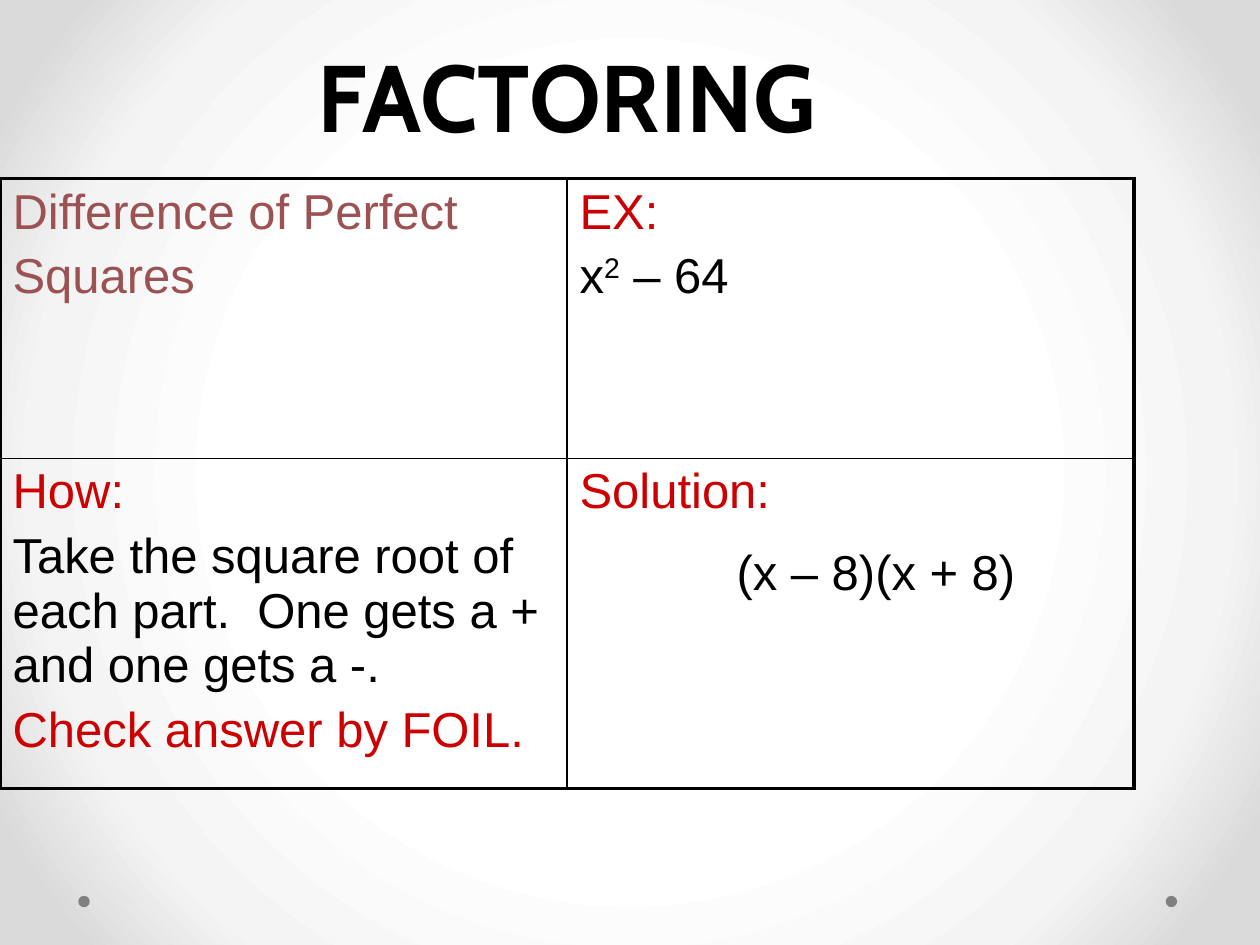
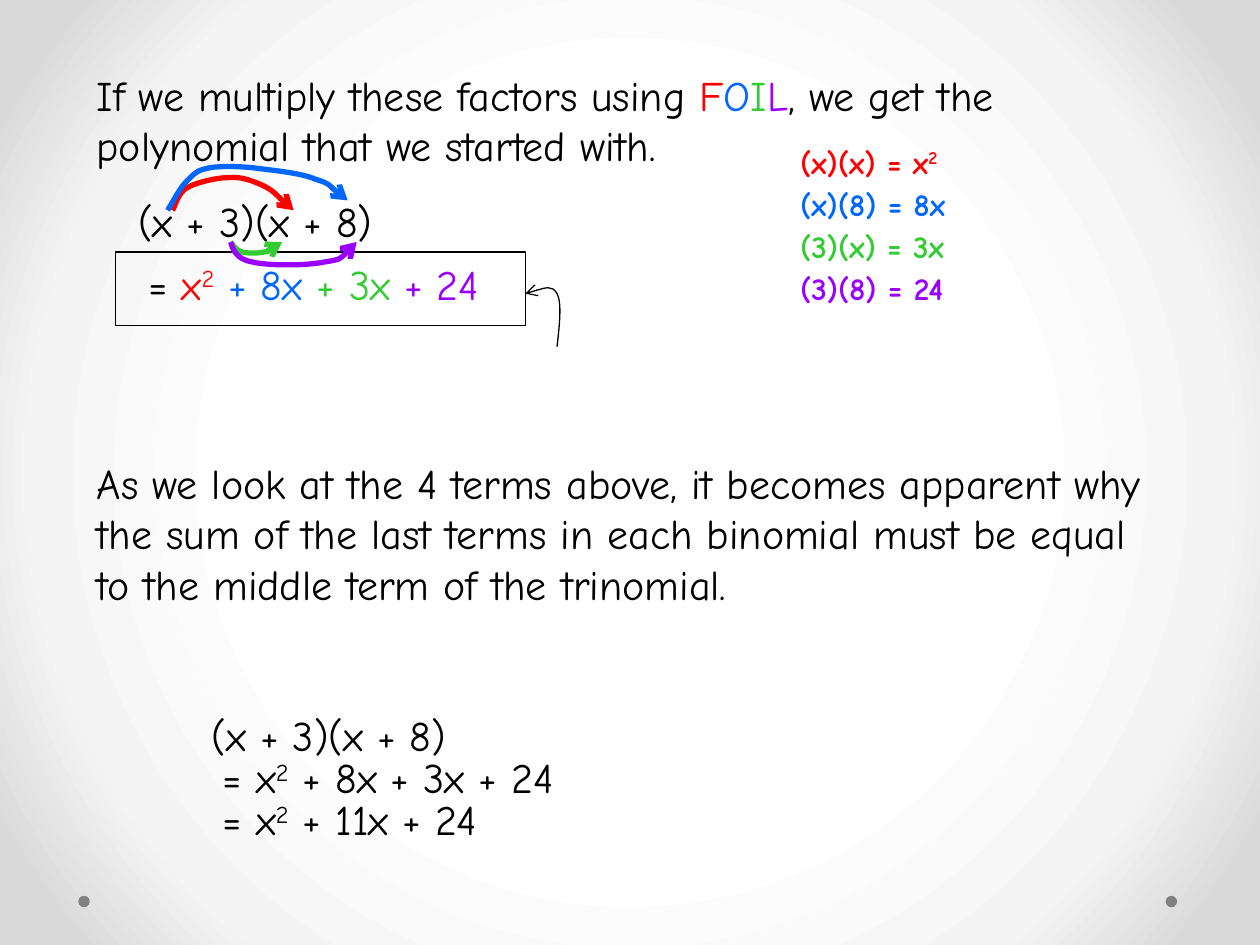
from lxml.etree import SubElement
from pptx import Presentation
from pptx.dml.color import RGBColor
from pptx.enum.shapes import MSO_SHAPE
from pptx.enum.text import MSO_ANCHOR, PP_ALIGN
from pptx.oxml import parse_xml
from pptx.oxml.ns import nsdecls, qn
from pptx.util import Cm, Pt

COLORS = {
    "ink": "000000", "dot": "808080", "topic": "9C5252", "heading": "CC0000",
    "first": "FF0000", "outer": "0066FF", "inner": "33CC33", "last": "9900FF",
}
BACKDROP = [(50, "FFFFFF"), (76, "F4F4F4"), (92, "DADADA")]
TITLE_FONT, TABLE_FONT, BODY_FONT = "Cabin", "Arial", "Comic Neue"
LINE_STEP = 0.85  # cm between stacked lines of algebra


def rgb(name):
    return RGBColor.from_string(COLORS[name])


# Shared slide ground
def add_slide(deck):
    slide = deck.slides.add_slide(deck.slide_layouts[6])
    stops = "".join(
        f'<a:gs pos="{pos * 1000}"><a:srgbClr val="{color}"/></a:gs>'
        for pos, color in BACKDROP)
    slide.element.cSld.insert(0, parse_xml(
        f'<p:bg {nsdecls("p", "a")}><p:bgPr><a:gradFill rotWithShape="1">'
        f'<a:gsLst>{stops}</a:gsLst><a:path path="circle">'
        '<a:fillToRect l="50000" t="50000" r="50000" b="50000"/></a:path>'
        '</a:gradFill><a:effectLst/></p:bgPr></p:bg>'))
    for left in (23.5, 1.58):
        dot = slide.shapes.add_shape(
            MSO_SHAPE.OVAL, Cm(left), Cm(18.06), Cm(0.23), Cm(0.23))
        dot.shadow.inherit = False
        dot.fill.solid()
        dot.fill.fore_color.rgb = rgb("dot")
        dot.line.fill.background()
    return slide


# Text: a paragraph is a list of (text, colour[, "sup"]) runs
def write_runs(paragraph, runs, font, size, bold=False):
    for text, color, *raised in runs:
        run = paragraph.add_run()
        run.text = text
        run.font.name = font
        run.font.size = Pt(size)
        run.font.bold = bold
        run.font.color.rgb = rgb(color)
        if raised:
            run._r.get_or_add_rPr().set("baseline", "30000")


def add_text(slide, left, top, width, height, runs,
             font=BODY_FONT, size=24, bold=False):
    frame = slide.shapes.add_textbox(
        Cm(left), Cm(top), Cm(width), Cm(height)).text_frame
    frame.word_wrap = True
    write_runs(frame.paragraphs[0], runs, font, size, bold)
    return frame


def add_title(slide, text):
    frame = add_text(slide, 0, 0, 22.86, 3.18, [(text, "ink")],
                     TITLE_FONT, 54, True)
    frame.vertical_anchor = MSO_ANCHOR.BOTTOM
    frame.paragraphs[0].alignment = PP_ALIGN.CENTER
    frame.paragraphs[0].line_spacing = Pt(58)


# Table with a thick frame and thin inner rules
def set_borders(cell, widths):
    properties = cell._tc.get_or_add_tcPr()
    for index, (side, width) in enumerate(zip("LRTB", widths)):
        properties.insert(index, parse_xml(
            f'<a:ln{side} {nsdecls("a")} w="{Pt(width)}"><a:solidFill>'
            f'<a:srgbClr val="{COLORS["ink"]}"/></a:solidFill></a:ln{side}>'))


def add_method_table(slide, rows, row_heights, thick=2.25, thin=1):
    table = slide.shapes.add_table(
        2, 2, Cm(0), Cm(3.6), Cm(22.86), Cm(sum(row_heights))).table
    table.first_row = table.horz_banding = False
    for r, height in enumerate(row_heights):
        table.rows[r].height = Cm(height)
        for c, paragraphs in enumerate(rows[r]):
            cell = table.cell(r, c)
            cell.fill.background()
            set_borders(cell, [thick if outer else thin for outer in
                               (c == 0, c == 1, r == 0, r == 1)])
            for index, runs in enumerate(paragraphs):
                frame = cell.text_frame
                paragraph = frame.add_paragraph() if index else frame.paragraphs[0]
                if index:
                    paragraph.space_before = Pt(5.6)
                write_runs(paragraph, runs, TABLE_FONT, 28)


# Curved arrow through Bezier segments: start, then two controls and an end each
def add_curved_arrow(slide, color, width, nodes):
    start, *rest = [(Cm(x), Cm(y)) for x, y in nodes]
    builder = slide.shapes.build_freeform(*start)
    builder.add_line_segments(rest, close=False)
    arrow = builder.convert_to_shape()
    segments = list(arrow._element.iter(qn("a:lnTo")))
    for i in range(0, len(segments), 3):
        outline = segments[i].getparent()
        curve = SubElement(outline, qn("a:cubicBezTo"))
        for segment in segments[i:i + 3]:
            curve.append(segment[0])
            outline.remove(segment)
    arrow.shadow.inherit = False
    arrow.fill.background()
    arrow.line.color.rgb = rgb(color)
    arrow.line.width = Pt(width)
    SubElement(arrow.line._get_or_add_ln(), qn("a:tailEnd"), type="arrow")


def add_frame(slide, left, top, width, height):
    frame = slide.shapes.add_shape(
        MSO_SHAPE.RECTANGLE, Cm(left), Cm(top), Cm(width), Cm(height))
    frame.shadow.inherit = False
    frame.fill.background()
    frame.line.color.rgb = rgb("ink")
    frame.line.width = Pt(0.75)


def build_factoring(deck):
    slide = add_slide(deck)
    add_title(slide, "FACTORING")
    topic = [[("Difference of Perfect", "topic")], [("Squares", "topic")]]
    example = [[("EX:", "heading")],
               [("x", "ink"), ("2", "ink", "sup"), (" – 64", "ink")]]
    how = [[("How:", "heading")],
           [("Take the square root of each part.  One gets a + "
             "and one gets a -.", "ink")],
           [("Check answer by FOIL.", "heading")]]
    solution = [[("Solution:", "heading")]]
    add_method_table(slide, [[topic, example], [how, solution]], [5.64, 6.65])
    add_text(slide, 14.6, 10.8, 7.42, 3.23, [("(x – 8)(x + 8)", "ink")],
             TABLE_FONT, 28)


def build_foil_check(deck):
    slide = add_slide(deck)
    factors = [("(x + 3)(x + 8)", "ink")]

    # Multiplying the factors
    add_text(slide, 1.7, 1.27, 21.79, 2.29, [
        ("If we multiply these factors using ", "ink"),
        ("F", "first"), ("O", "outer"), ("I", "inner"), ("L", "last"),
        (", we get the polynomial that we started with.", "ink")])
    add_text(slide, 2.54, 3.81, 5.92, 1.27, factors)
    add_text(slide, 2.74, 5.08, 8.89, 1.27, [
        ("=", "ink"), (" x", "first"), ("2", "first", "sup"),
        (" + 8x ", "outer"), ("+ 3x ", "inner"), ("+ 24", "last")])

    # The four products
    products = [
        [("(x)(x) = x", "first"), ("2", "first", "sup")],
        [("(x)(8) = 8x", "outer")],
        [("(3)(x) = 3x", "inner")],
        [("(3)(8) = 24", "last")],
    ]
    for i, product in enumerate(products):
        add_text(slide, 15.88, 2.75 + i * LINE_STEP, 5.92, 1.02, product,
                 size=18, bold=True)

    # Why the middle term is a sum
    add_text(slide, 1.7, 9.1, 21.79, 3.3, [
        ("As we look at the 4 terms above, it becomes apparent why the sum of "
         "the last terms in each binomial must be equal to the middle term of "
         "the trinomial.", "ink")])
    add_frame(slide, 2.33, 5.08, 8.26, 1.48)
    add_curved_arrow(slide, "ink", 0.75, [
        (11.23, 6.99), (11.28, 6.55), (11.33, 6.1), (11.23, 5.92),
        (11.13, 5.74), (10.85, 5.84), (10.59, 5.92)])

    # Worked expansion
    add_text(slide, 4.02, 14.18, 5.92, 1.27, factors)
    for i, terms in enumerate((" + 8x + 3x + 24", " + 11x + 24"), start=1):
        add_text(slide, 4.24, 14.18 + i * LINE_STEP, 7.82, 1.27, [
            ("= x", "ink"), ("2", "ink", "sup"), (terms, "ink")])

    # FOIL arrows
    foil_arrows = {
        "first": [(3.48, 4.24), (3.53, 4.17), (3.58, 3.89), (3.78, 3.78),
                  (3.96, 3.68), (4.37, 3.58), (4.62, 3.58),
                  (4.85, 3.56), (5.05, 3.63), (5.28, 3.73),
                  (5.51, 3.84), (5.79, 4.14), (5.92, 4.24)],
        "outer": [(3.38, 4.24), (3.53, 3.99), (3.66, 3.73), (3.81, 3.61),
                  (3.96, 3.45), (4.01, 3.43), (4.24, 3.38),
                  (4.45, 3.35), (4.72, 3.35), (5.08, 3.38),
                  (5.44, 3.43), (6.05, 3.48), (6.35, 3.61),
                  (6.68, 3.71), (6.86, 3.96), (7.01, 4.04)],
        "inner": [(4.65, 4.88), (4.7, 4.93), (4.75, 5.05), (4.88, 5.08),
                  (4.98, 5.11), (5.21, 5.11), (5.33, 5.08),
                  (5.49, 5.05), (5.64, 4.93), (5.69, 4.88)],
        "last": [(4.65, 4.88), (4.7, 5.05), (4.78, 5.23), (5.08, 5.28),
                 (5.38, 5.36), (6.2, 5.36), (6.55, 5.28),
                 (6.91, 5.23), (7.06, 5.05), (7.19, 4.88)],
    }
    for color, nodes in foil_arrows.items():
        add_curved_arrow(slide, color, 3, nodes)


def main():
    deck = Presentation()
    deck.slide_width, deck.slide_height = Cm(25.4), Cm(19.05)
    build_factoring(deck)
    build_foil_check(deck)
    deck.save("out.pptx")


if __name__ == "__main__":
    main()
